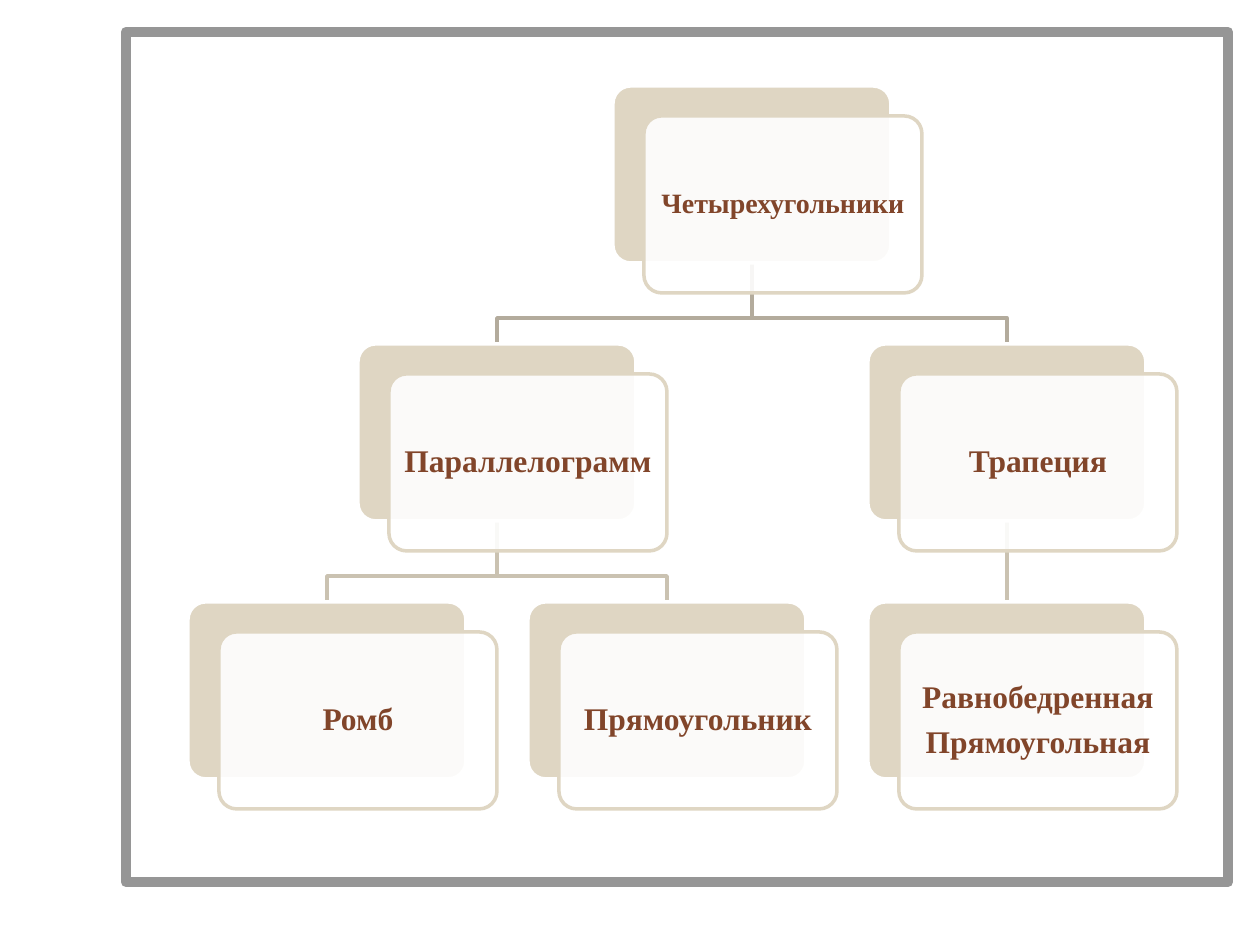
from lxml import etree
from pptx import Presentation
from pptx.dml.color import RGBColor
from pptx.enum import shapes, text
from pptx.oxml.ns import qn
from pptx.util import Pt

PX = 914400 // 126  # EMU in one px

WHITE = RGBColor(0xFF, 0xFF, 0xFF)
GREY = RGBColor(0x96, 0x96, 0x96)
SAND = RGBColor(0xDF, 0xD6, 0xC3)
BROWN = RGBColor(0x81, 0x45, 0x2A)
LINK_COLOURS = [RGBColor(0xB3, 0xAB, 0x9C), RGBColor(0xCA, 0xC2, 0xB1)]

# (lines of text, font size, children)
TREE = (["Четырехугольники"], 16, [
    (["Параллелограмм"], 18, [
        (["Ромб"], 18, []),
        (["Прямоугольник"], 18, []),
    ]),
    (["Трапеция"], 18, [
        (["Равнобедренная", "Прямоугольная"], 18, []),
    ]),
])

FRAME = (126, 32, 1102, 850)
CARD_W, CARD_H = 278, 177
LEFT, TOP = 188, 86
COLUMN_STEP, ROW_STEP = 340, 258
OFFSET_X, OFFSET_Y = 31, 30  # front plate against back plate
BEND = 26  # height of a link's bend above the child
INSET = 8

prs = Presentation()
prs.slide_width, prs.slide_height = 1260 * PX, 945 * PX
slide = prs.slides.add_slide(prs.slide_layouts[6])


def plate(kind, box, fill, line, width):
    shape = slide.shapes.add_shape(kind, *(v * PX for v in box))
    shape.shadow.inherit = False
    shape.fill.solid()
    shape.fill.fore_color.rgb = fill
    shape.line.color.rgb = line
    shape.line.width = Pt(width)
    return shape


def rounded(x, y, fill, line):
    shape = plate(shapes.MSO_SHAPE.ROUNDED_RECTANGLE, (x, y, CARD_W, CARD_H), fill, line, 2)
    shape.adjustments[0] = 0.1
    return shape


def card(x, y, lines, size):
    """Draw a back plate and a translucent front plate with text; return the back plate."""
    back = rounded(x, y, SAND, WHITE)
    front = rounded(x + OFFSET_X, y + OFFSET_Y, WHITE, SAND)
    colour = front._element.spPr.find(qn("a:solidFill"))[0]
    etree.SubElement(colour, qn("a:alpha"), val="90000")

    frame = front.text_frame
    frame.word_wrap = True
    frame.vertical_anchor = text.MSO_ANCHOR.MIDDLE
    for side in ("left", "top", "right", "bottom"):
        setattr(frame, f"margin_{side}", INSET * PX)
    frame.text = "\n".join(lines)
    for paragraph in frame.paragraphs:
        paragraph.alignment = text.PP_ALIGN.CENTER
        paragraph.line_spacing = 0.9
        paragraph.space_after = Pt(size * 0.35)
        for name, value in {"name": "Times New Roman", "size": Pt(size), "bold": True}.items():
            setattr(paragraph.font, name, value)
        paragraph.font.color.rgb = BROWN
    return back


def link(parent, child, colour):
    """Join two back plates, straight or bent, behind all cards."""
    x1, y1 = parent.left + parent.width // 2, parent.top + parent.height
    x2, y2 = child.left + child.width // 2, child.top
    if x1 == x2:
        line = slide.shapes.add_connector(shapes.MSO_CONNECTOR.STRAIGHT, x1, y1, x2, y2)
        line.begin_connect(parent, 2)
        line.end_connect(child, 0)
        etree.SubElement(line._element.spPr, qn("a:effectLst"))
    else:
        bend = y2 - BEND * PX
        path = slide.shapes.build_freeform(x1, y1)
        path.add_line_segments([(x1, bend), (x2, bend), (x2, y2)], close=False)
        line = path.convert_to_shape()
        line.shadow.inherit = False
        line.fill.background()
    line.line.color.rgb = colour
    line.line.width = Pt(2)
    slide.shapes._spTree.insert(3, line._element)  # just above the frame


def column(node, first):
    """Return a node's column (the mean of its children's) and its number of leaves."""
    columns, leaves = [], 0
    for child in node[2]:
        middle, count = column(child, first + leaves)
        columns.append(middle)
        leaves += count
    return (sum(columns) / len(columns), leaves) if columns else (first, 1)


def draw(node, first=0, level=0):
    lines, size, children = node
    middle, leaves = column(node, first)
    back = card(int(LEFT + middle * COLUMN_STEP), TOP + level * ROW_STEP, lines, size)
    for child in children:
        child_back, count = draw(child, first, level + 1)
        link(back, child_back, LINK_COLOURS[level])
        first += count
    return back, leaves


plate(shapes.MSO_SHAPE.RECTANGLE, FRAME, WHITE, GREY, 6)
draw(TREE)
prs.save("out.pptx")
